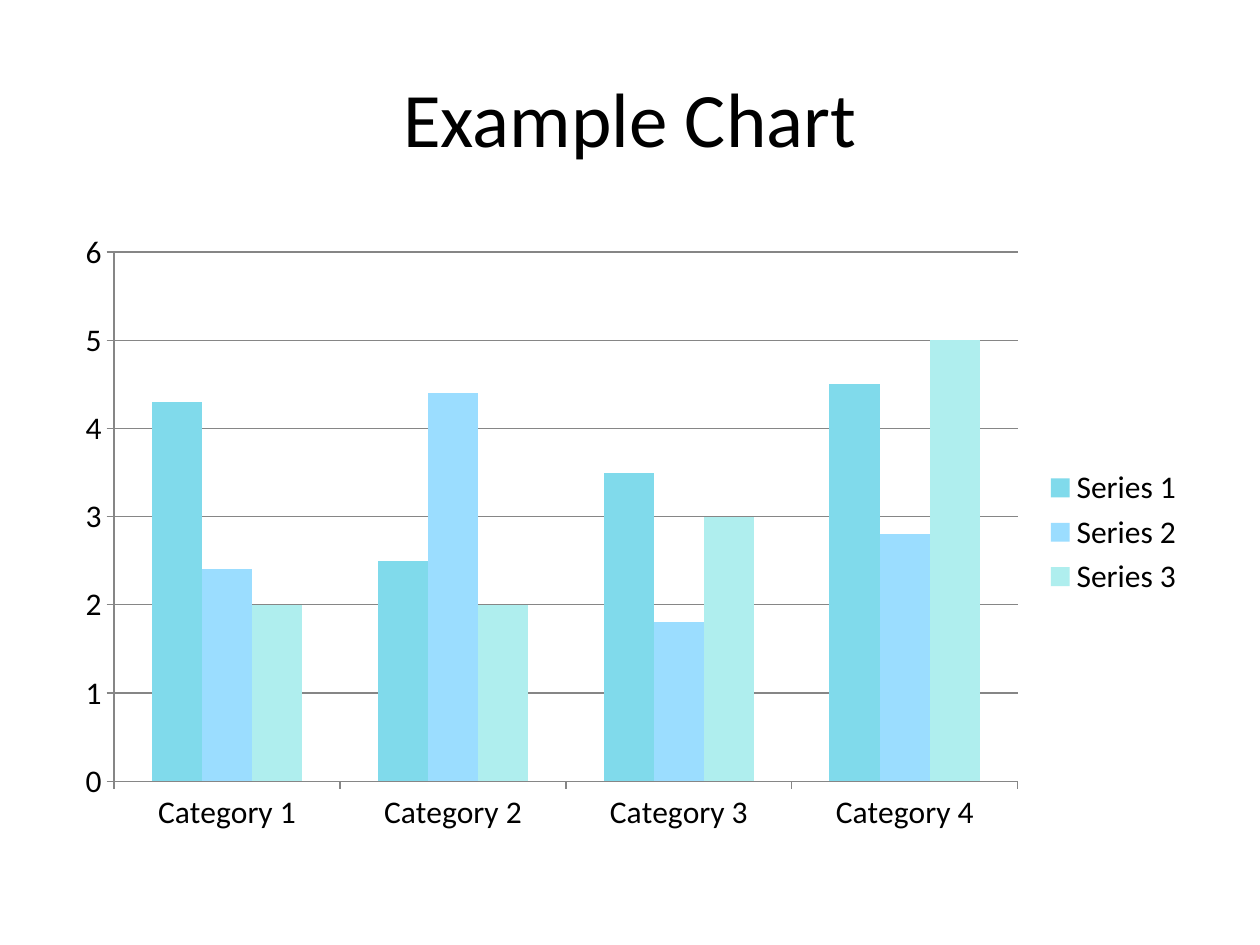
from dataclasses import dataclass

from pptx import Presentation
from pptx import util as u
from pptx.chart.data import CategoryChartData
from pptx.dml.color import RGBColor
from pptx.enum import chart as ch, text


@dataclass(frozen=True)
class Theme:
    font: str = "Calibri"
    ink: str = "000000"
    rule: str = "868686"
    series: tuple = ("80DAEB", "9BDDFF", "AFEEEE")
    title_pt: int = 44
    chart_pt: int = 18
    line_pt: float = 0.75


T = Theme()
W, H = u.Inches(10), u.Inches(7.5)
CATEGORIES = [f"Category {i}" for i in range(1, 5)]
SERIES = {
    "Series 1": (4.3, 2.5, 3.5, 4.5),
    "Series 2": (2.4, 4.4, 1.8, 2.8),
    "Series 3": (2, 2, 3, 5),
}


def share(x, y, w, h):
    return int(W * x), int(H * y), int(W * w), int(H * h)


def style_font(font, size):
    font.name = T.font
    font.size = u.Pt(size)
    font.color.rgb = RGBColor.from_string(T.ink)


def style_line(line):
    line.color.rgb = RGBColor.from_string(T.rule)
    line.width = u.Pt(T.line_pt)


def add_title(s, box, words):
    sp = s.shapes.title
    sp.left, sp.top, sp.width, sp.height = box
    tf = sp.text_frame
    tf.word_wrap = True
    tf.vertical_anchor = text.MSO_ANCHOR.MIDDLE
    p = tf.paragraphs[0]
    p.alignment = text.PP_ALIGN.CENTER
    r = p.add_run()
    r.text = words
    style_font(r.font, T.title_pt)


def add_columns(s, box):
    data = CategoryChartData()
    data.categories = CATEGORIES
    for name, values in SERIES.items():
        data.add_series(name, values)
    chart = s.shapes.add_chart(ch.XL_CHART_TYPE.COLUMN_CLUSTERED, *box, data).chart
    style_font(chart.font, T.chart_pt)
    chart.has_title = False
    chart.has_legend = True
    chart.legend.position = ch.XL_LEGEND_POSITION.RIGHT
    chart.legend.include_in_layout = False

    plot = chart.plots[0]
    plot.gap_width = 150
    plot.vary_by_categories = False
    for series, color in zip(plot.series, T.series):
        series.format.fill.solid()
        series.format.fill.fore_color.rgb = RGBColor.from_string(color)

    for axis in (chart.category_axis, chart.value_axis):
        axis.major_tick_mark = ch.XL_TICK_MARK.OUTSIDE
        style_line(axis.format.line)
    values = chart.value_axis
    values.minimum_scale, values.maximum_scale, values.major_unit = 0, 6, 1
    values.has_major_gridlines = True
    style_line(values.major_gridlines.format.line)


def main():
    prs = Presentation()
    prs.slide_width, prs.slide_height = W, H
    s = prs.slides.add_slide(prs.slide_layouts[5])
    add_title(s, share(0.05, 0.04, 0.9, 1 / 6), "Example Chart")
    add_columns(s, share(0.05, 7 / 30, 0.9, 0.66))
    prs.save("out.pptx")


if __name__ == "__main__":
    main()
